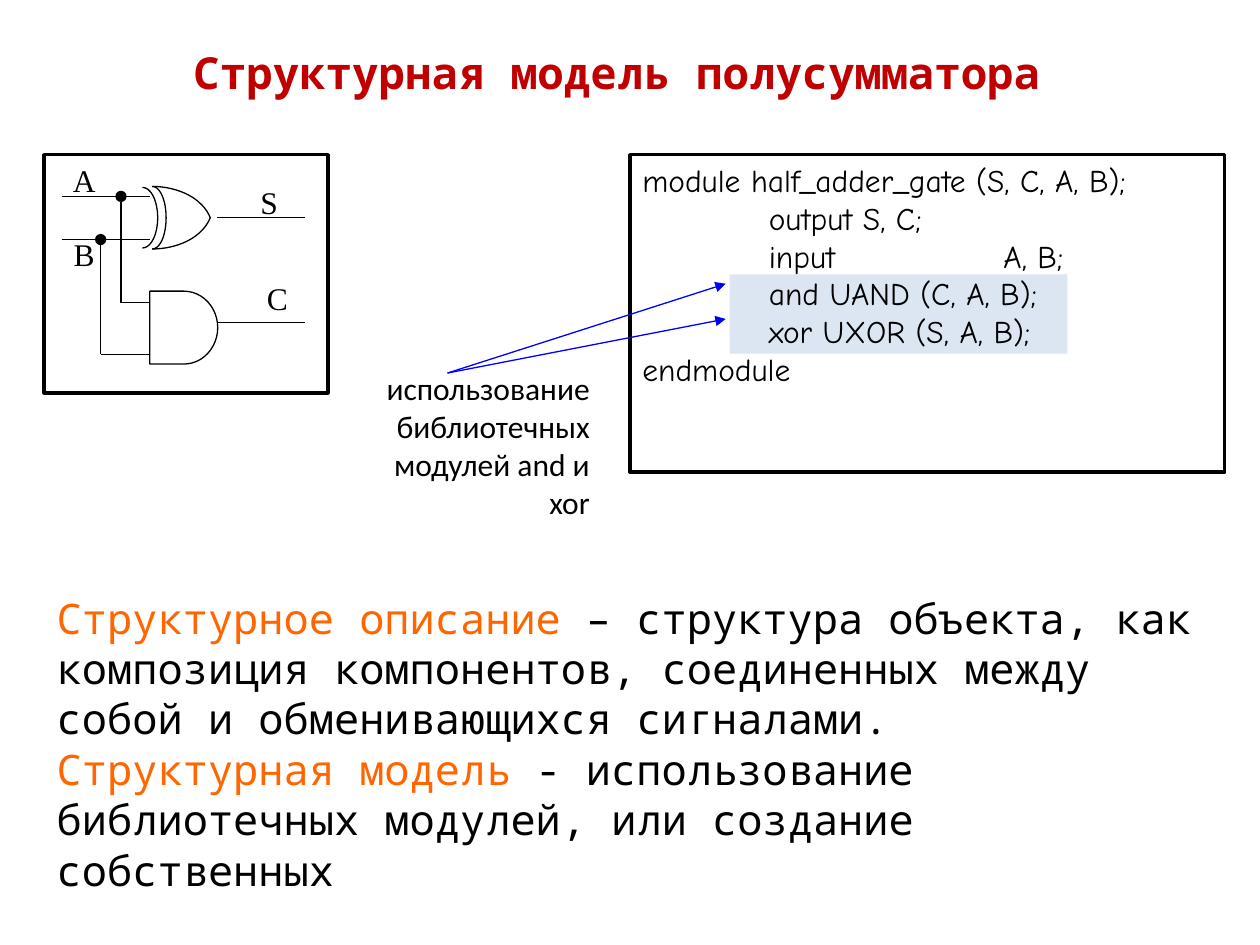
import pptx
import pptx.dml.color
import pptx.enum.shapes
import pptx.enum.text
import pptx.oxml.ns
import pptx.util
from lxml import etree

Cm = pptx.util.Cm
KIND = pptx.enum.shapes.MSO_SHAPE
ALIGN = pptx.enum.text.PP_ALIGN
ANCHOR = pptx.enum.text.MSO_ANCHOR

THEME = {
    "title": ("Noto Sans Mono", 25.2, "C00000"),
    "term": ("Noto Sans Mono", 24, "FF6600"),
    "body": ("Noto Sans Mono", 24, "000000"),
    "code": ("Comic Neue", 18, "000000"),
    "pin": ("Times New Roman", 18, "000000"),
    "note": ("Calibri", 18, "000000"),
    "ink": "000000",
    "arrow": "0000FF",
    "highlight": "DCE6F2",
    "thin": 0.75,
    "thick": 2,
}

TITLE = "Структурная модель полусумматора "
CODE = [
    (0, "module half_adder_gate (S, C, A, B);"),
    (1, "output S, C;"),
    (1, "input\tA, B;"),
    (1, "and UAND (C, A, B);"),
    (1, "xor UXOR (S, A, B);"),
    (0, "endmodule"),
]
CODE_INDENT = 2.55
CODE_TAB = 4.73
NOTE = ["использование", "библиотечных", "модулей and и xor"]
DEFINITIONS = [
    ("Структурное описание", " – структура объекта, как композиция компонентов, "
     "соединенных между собой и обменивающихся сигналами."),
    ("Структурная модель", " - использование библиотечных модулей, или создание собственных"),
]

TITLE_BOX = (1.27, 0.76, 22.86, 1.37)
CIRCUIT_BOX = (0.89, 3.12, 5.72, 4.8)
CODE_BOX = (12.7, 3.12, 11.99, 6.4)
HIGHLIGHT_BOX = (14.71, 5.53, 6.81, 1.6)
NOTE_BOX = (6.98, 7.32, 5.16, 2.39)
BODY_BOX = (0.89, 11.81, 23.39, 5.89)
ARROW_START = (9.02, 7.52)
ARROW_ENDS = [(14.63, 5.72), (14.63, 6.43)]

INPUT_X, GATE_X, OUTPUT_X, END_X = 1.24, 3.02, 4.37, 6.15
A_Y, B_Y, S_Y, C_Y = 3.96, 4.83, 4.39, 6.5
A_BRANCH, B_BRANCH = (2.44, 6.1), (2.03, 7.14)
AND_GATE = (GATE_X, 5.87, 1.37, 1.47)
DOT = 0.2
WIRES = [((INPUT_X, y), (GATE_X, y)) for y in (A_Y, B_Y)]
WIRES += [((OUTPUT_X, y), (END_X, y)) for y in (S_Y, C_Y)]
for (branch_x, branch_y), source_y in ((A_BRANCH, A_Y), (B_BRANCH, B_Y)):
    WIRES += [((branch_x, source_y), (branch_x, branch_y)),
              ((branch_x, branch_y), (GATE_X, branch_y))]
PINS = [("A", 1.22, 3.12), ("B", 1.22, 4.6), ("S", 4.95, 3.56), ("C", 5.12, 5.49)]
PIN_SIZE = (0.95, 1.02)
XOR_ARCS = [
    ((3.07, 3.76), (3.61, 3.76), (4.09, 4.01), (4.24, S_Y)),
    ((3.07, 3.76), (3.23, 3.76), (3.35, 4.04), (3.35, S_Y)),
    ((2.87, 3.78), (3.05, 3.78), (3.18, 4.06), (3.18, S_Y)),
]
ARC_STEPS = 16


def lengths(values):
    return [Cm(value) for value in values]


def rgb(code):
    return pptx.dml.color.RGBColor.from_string(code)


def write(paragraph, text, style):
    run = paragraph.add_run()
    run.text = text
    face, size, color = THEME[style]
    run.font.name = face
    run.font.size = pptx.util.Pt(size)
    run.font.color.rgb = rgb(color)
    return run


def paragraphs(frame, count):
    return [frame.paragraphs[0]] + [frame.add_paragraph() for _ in range(count - 1)]


def outline(part, color, width):
    part.line.color.rgb = rgb(color)
    part.line.width = pptx.util.Pt(width)


def paint(part, fill=None, width=None):
    part.shadow.inherit = False
    if fill:
        part.fill.solid()
        part.fill.fore_color.rgb = rgb(fill)
    else:
        part.fill.background()
    if width:
        outline(part, THEME["ink"], width)
    else:
        part.line.fill.background()
    return part


def add_part(shapes, kind, box, fill=None, width=None):
    return paint(shapes.add_shape(kind, *lengths(box)), fill, width)


def add_line(shapes, start, end, color):
    line = shapes.add_connector(pptx.enum.shapes.MSO_CONNECTOR.STRAIGHT, *lengths(start + end))
    outline(line, color, THEME["thin"])
    etree.SubElement(line._element.spPr, pptx.oxml.ns.qn("a:effectLst"))
    return line


def arc_points(controls):
    upper = []
    for step in range(ARC_STEPS + 1):
        t = step / ARC_STEPS
        weights = ((1 - t) ** 3, 3 * t * (1 - t) ** 2, 3 * t * t * (1 - t), t ** 3)
        upper.append(tuple(sum(w * point[axis] for w, point in zip(weights, controls))
                           for axis in (0, 1)))
    return upper + [(x, 2 * S_Y - y) for x, y in reversed(upper[:-1])]


def place(placeholder, box):
    placeholder.left, placeholder.top, placeholder.width, placeholder.height = lengths(box)
    placeholder.text_frame.auto_size = pptx.enum.text.MSO_AUTO_SIZE.NONE
    return placeholder.text_frame


def add_circuit(slide):
    circuit = slide.shapes.add_group_shape().shapes
    for start, end in WIRES:
        add_line(circuit, start, end, THEME["ink"])
    add_part(circuit, KIND.FLOWCHART_DELAY, AND_GATE, width=THEME["thin"])
    for x, y in ((A_BRANCH[0], A_Y), (B_BRANCH[0], B_Y)):
        add_part(circuit, KIND.OVAL, (x - DOT / 2, y - DOT / 2, DOT, DOT),
                 THEME["ink"], THEME["thin"])
    for controls in XOR_ARCS:
        first, *rest = [lengths(point) for point in arc_points(controls)]
        builder = circuit.build_freeform(*first)
        builder.add_line_segments(rest, close=False)
        paint(builder.convert_to_shape(), width=THEME["thin"])
    for name, x, y in PINS:
        frame = circuit.add_textbox(*lengths((x, y) + PIN_SIZE)).text_frame
        frame.word_wrap = False
        frame.vertical_anchor = ANCHOR.MIDDLE
        frame.paragraphs[0].alignment = ALIGN.CENTER
        write(frame.paragraphs[0], name, "pin")
    add_part(slide.shapes, KIND.RECTANGLE, CIRCUIT_BOX, width=THEME["thick"])


def add_code(slide):
    add_part(slide.shapes, KIND.RECTANGLE, HIGHLIGHT_BOX, THEME["highlight"])
    frame = add_part(slide.shapes, KIND.RECTANGLE, CODE_BOX, width=THEME["thick"]).text_frame
    frame.vertical_anchor = ANCHOR.TOP
    for paragraph, (level, text) in zip(paragraphs(frame, len(CODE)), CODE):
        paragraph.alignment = ALIGN.LEFT
        properties = paragraph._p.get_or_add_pPr()
        properties.set("marL", str(Cm(CODE_INDENT * level)))
        if "\t" in text:
            stops = etree.SubElement(properties, pptx.oxml.ns.qn("a:tabLst"))
            etree.SubElement(stops, pptx.oxml.ns.qn("a:tab"), pos=str(Cm(CODE_TAB)), algn="l")
        write(paragraph, text, "code")


def add_note(slide):
    frame = slide.shapes.add_textbox(*lengths(NOTE_BOX)).text_frame
    frame.word_wrap = True
    for paragraph, text in zip(paragraphs(frame, len(NOTE)), NOTE):
        paragraph.alignment = ALIGN.RIGHT
        write(paragraph, text, "note")
    for end in ARROW_ENDS:
        arrow = add_line(slide.shapes, ARROW_START, end, THEME["arrow"])
        etree.SubElement(arrow.line._get_or_add_ln(), pptx.oxml.ns.qn("a:tailEnd"), type="triangle")


def main():
    deck = pptx.Presentation()
    deck.slide_width, deck.slide_height = lengths((25.4, 19.05))
    slide = deck.slides.add_slide(deck.slide_layouts[1])

    heading = place(slide.shapes.title, TITLE_BOX)
    heading.vertical_anchor = ANCHOR.MIDDLE
    heading.paragraphs[0].alignment = ALIGN.CENTER
    write(heading.paragraphs[0], TITLE, "title").font.bold = True

    body = place(slide.placeholders[1], BODY_BOX)
    for paragraph, (term, meaning) in zip(paragraphs(body, len(DEFINITIONS)), DEFINITIONS):
        paragraph.space_before = pptx.util.Pt(0)
        properties = paragraph._p.get_or_add_pPr()
        properties.set("marL", "0")
        properties.set("indent", "0")
        etree.SubElement(properties, pptx.oxml.ns.qn("a:buNone"))
        write(paragraph, term, "term")
        write(paragraph, meaning, "body")

    add_code(slide)
    add_circuit(slide)
    add_note(slide)
    deck.save("out.pptx")


if __name__ == "__main__":
    main()
